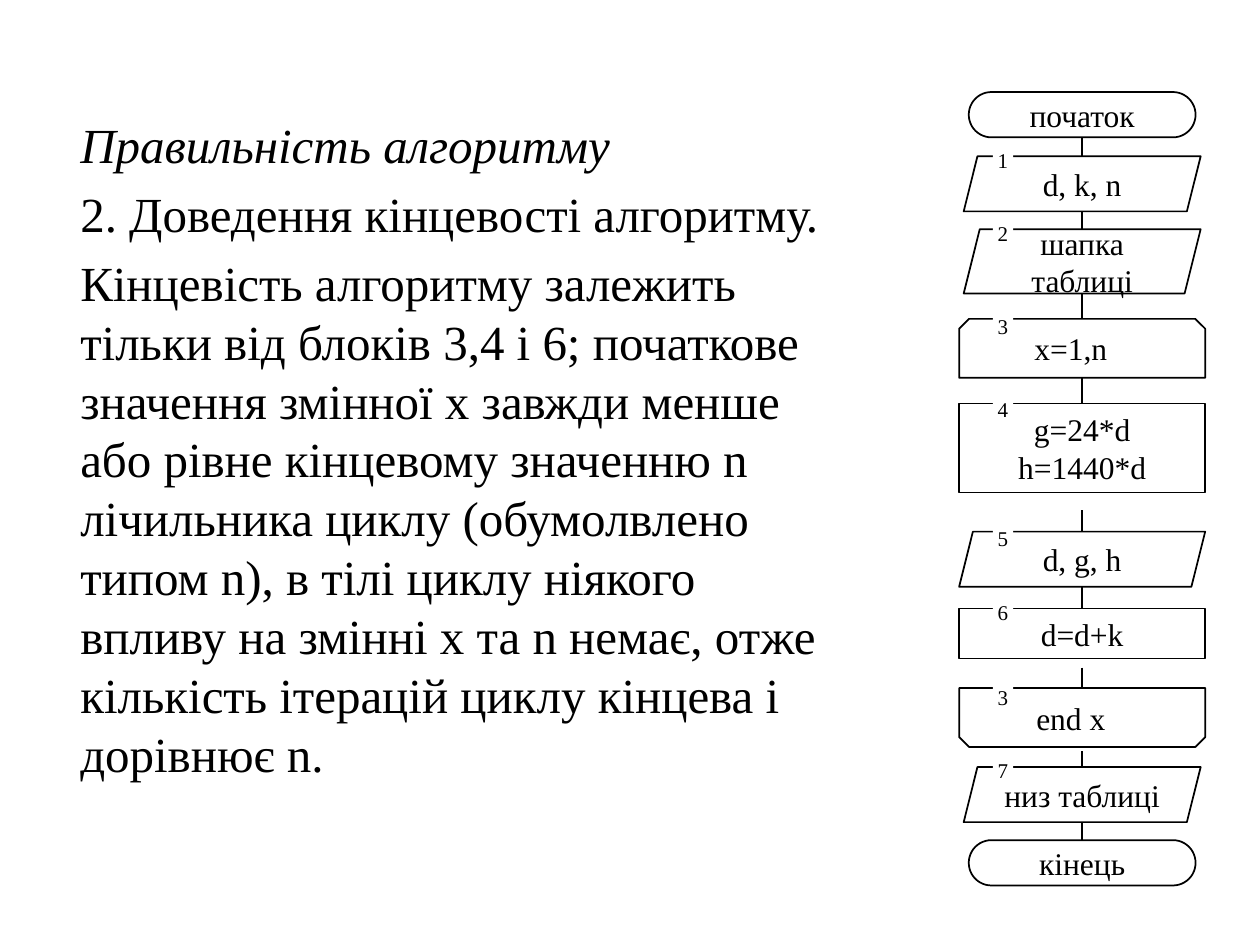
from dataclasses import dataclass
from itertools import pairwise

from lxml.etree import SubElement
from pptx import Presentation
from pptx.dml.color import RGBColor
from pptx.enum.shapes import MSO_CONNECTOR, MSO_SHAPE as Shape
from pptx.enum.text import MSO_ANCHOR, MSO_AUTO_SIZE, PP_ALIGN
from pptx.oxml.ns import qn
from pptx.util import Pt

FONT = "Times New Roman"
BLACK, WHITE = "000000", "FFFFFF"
CENTRE = 618.4
LOOP_TEXT_SHIFT = -6.5
LABEL_LEFT, LABEL_WIDTH, LABEL_HEIGHT = 567.4, 11.5, 21.6


@dataclass
class Step:
    kind: Shape
    text: str
    top: float
    width: float
    height: float
    number: str = ""
    label_top: float = 0
    gap_below: float = 0
    rotation: int = 0

    @property
    def bottom(self) -> float:
        return self.top + self.height


TERMINAL, DATA = Shape.ROUNDED_RECTANGLE, Shape.PARALLELOGRAM
PROCESS, LOOP = Shape.RECTANGLE, Shape.SNIP_2_SAME_RECTANGLE
STEPS = [
    Step(TERMINAL, "початок", 52.6, 129.6, 25.9),
    Step(DATA, "d, k, n", 89.3, 135.4, 31.5, "1", 80.6),
    Step(DATA, "шапка таблиці", 131, 135.4, 36.7, "2", 122.4),
    Step(LOOP, "x=1,n", 182.2, 140.6, 33.7, "3", 175.7),
    Step(PROCESS, "g=24*d\nh=1440*d", 230.4, 140.6, 51, "4", 223.2, 10.2),
    Step(DATA, "d, g, h", 303.8, 140.6, 31.5, "5", 296.6),
    Step(PROCESS, "d=d+k", 347.7, 140.6, 28.8, "6", 339.1, 5),
    Step(LOOP, "end x", 393.1, 140.6, 33.7, "3", 387.4, 2.4, 180),
    Step(DATA, "низ таблиці", 438.3, 135.4, 31.5, "7", 429.1),
    Step(TERMINAL, "кінець", 480.1, 129.6, 25.9),
]
ADJUSTMENTS = {TERMINAL: 0.5, DATA: 0.25}


def colour(value: str) -> RGBColor:
    return RGBColor.from_string(value)


def style(para, size: float) -> None:
    para.font.name = FONT
    para.font.size = Pt(size)
    para.font.color.rgb = colour(BLACK)


def write(shape, text: str, size: float) -> None:
    """Put centred text into a shape, one paragraph a line."""
    frame = shape.text_frame
    frame.text = text
    frame.vertical_anchor = MSO_ANCHOR.MIDDLE
    for para in frame.paragraphs:
        para.alignment = PP_ALIGN.CENTER
        style(para, size)


def draw_step(page, step: Step) -> None:
    box = page.shapes.add_shape(step.kind, Pt(CENTRE - step.width / 2), Pt(step.top),
                                Pt(step.width), Pt(step.height))
    box.shadow.inherit = False
    box.fill.background()
    box.line.color.rgb = colour(BLACK)
    box.line.width = Pt(0.75 if step.kind == PROCESS else 1)
    box.rotation = step.rotation
    if step.kind in ADJUSTMENTS:
        box.adjustments[0] = ADJUSTMENTS[step.kind]
    if step.kind == LOOP:
        width = 56
        box = page.shapes.add_textbox(Pt(CENTRE + LOOP_TEXT_SHIFT - width / 2),
                                      Pt(step.top), Pt(width), Pt(step.height))
        box.text_frame.word_wrap = False
    write(box, step.text, 18)


def draw_label(page, step: Step) -> None:
    label = page.shapes.add_shape(Shape.RECTANGLE, Pt(LABEL_LEFT), Pt(step.label_top),
                                  Pt(LABEL_WIDTH), Pt(LABEL_HEIGHT))
    label.shadow.inherit = False
    label.fill.solid()
    label.fill.fore_color.rgb = colour(WHITE)
    label.line.fill.background()
    frame = label.text_frame
    frame.margin_left = frame.margin_right = 0
    write(label, step.number, 12)


def connect(page, upper: Step, lower: Step) -> None:
    line = page.shapes.add_connector(MSO_CONNECTOR.STRAIGHT, Pt(CENTRE),
                                     Pt(upper.bottom + upper.gap_below),
                                     Pt(CENTRE), Pt(lower.top))
    line.line.color.rgb = colour(BLACK)
    line.line.width = Pt(1)
    SubElement(line._element.spPr, qn("a:effectLst"))


def fill_body(body) -> None:
    body.left, body.top, body.width, body.height = Pt(0), Pt(65.5), Pt(500.4), Pt(468.7)
    frame = body.text_frame
    frame.auto_size = MSO_AUTO_SIZE.NONE
    frame.margin_left = frame.margin_right = Pt(14.4)
    frame.text = "\n".join([
        "Правильність алгоритму",
        "2. Доведення кінцевості алгоритму.",
        "Кінцевість алгоритму залежить тільки від блоків 3,4 і 6; початкове значення "
        "змінної х завжди менше або рівне кінцевому значенню n лічильника циклу "
        "(обумолвлено типом n), в тілі циклу ніякого впливу на змінні х та n немає, "
        "отже кількість ітерацій циклу кінцева і дорівнює n.",
    ])
    heading, *details = frame.paragraphs
    for para in frame.paragraphs:
        style(para, 28)
        para.space_before = Pt(5.6)
        para.level = 0 if para is heading else 1
        properties = para._p.get_or_add_pPr()
        properties.set("marL", str(Pt(27 if para is heading else 31.5)))
        properties.set("indent", "0")
    heading.font.italic = True
    heading.line_spacing = 0.9
    for para in frame.paragraphs:
        properties = para._p.get_or_add_pPr()
        properties.insert_element_before(
            properties.makeelement(qn("a:buNone"), {}),
            "a:tabLst", "a:defRPr", "a:extLst")


def main() -> None:
    deck = Presentation()
    deck.slide_width, deck.slide_height = Pt(720), Pt(540)
    page = deck.slides.add_slide(deck.slide_layouts[1])
    title = page.shapes.title._element
    title.getparent().remove(title)
    fill_body(page.placeholders[1])
    for upper, lower in pairwise(STEPS):
        connect(page, upper, lower)
    for step in STEPS:
        draw_step(page, step)
    for step in STEPS:
        if step.number:
            draw_label(page, step)
    deck.save("out.pptx")


if __name__ == "__main__":
    main()
